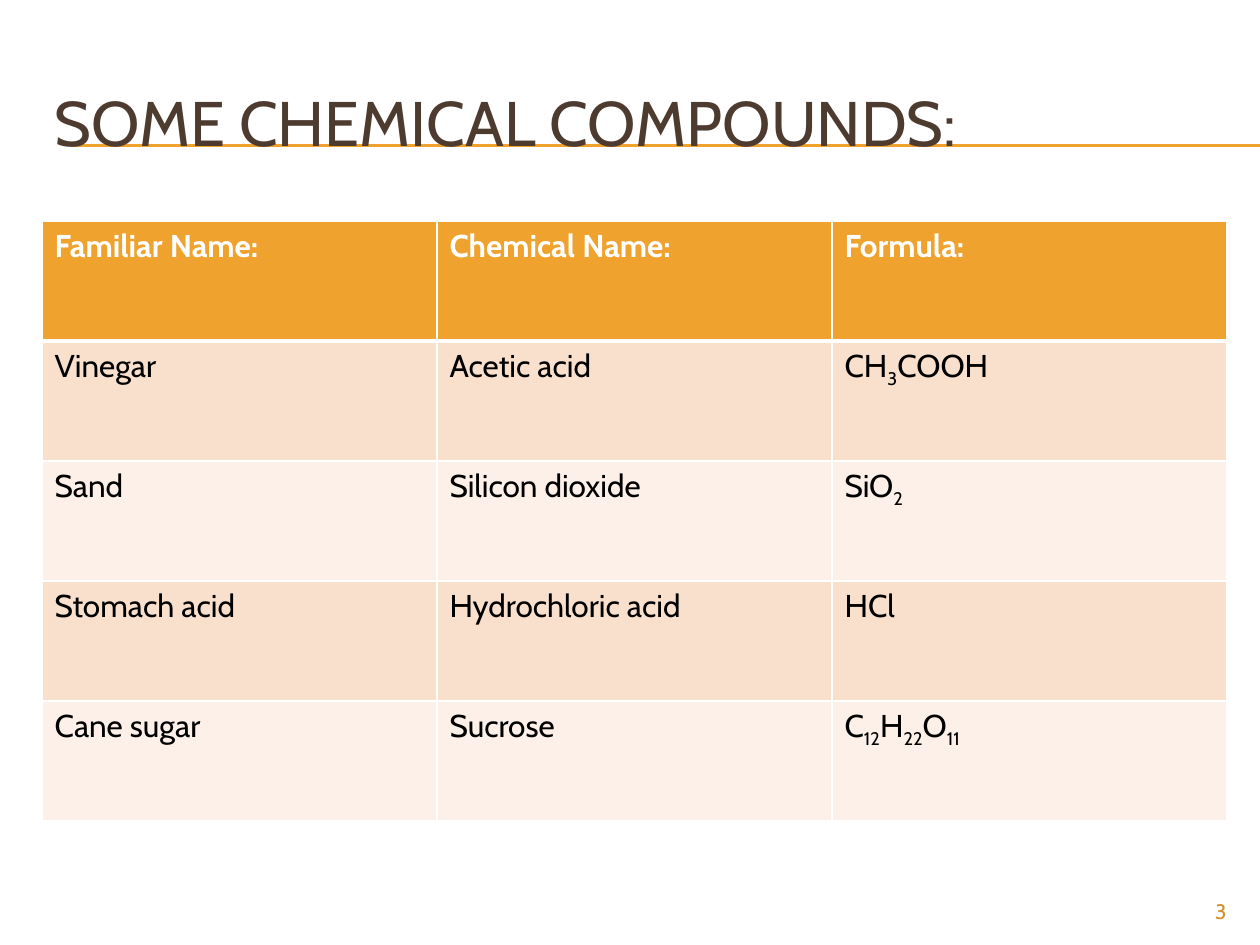
from dataclasses import dataclass
from itertools import groupby

from lxml.etree import SubElement
from pptx import Presentation
from pptx.dml.color import RGBColor
from pptx.enum.shapes import MSO_CONNECTOR as Conn
from pptx.enum.text import MSO_ANCHOR as Anchor, PP_ALIGN as Align
from pptx.oxml.ns import qn
from pptx.util import Emu, Pt

FONT = "Cabin"
PX = 914400 / 126  # EMU in one px
COLORS = {
    "accent": "F0A22E", "title": "4E3B30", "number": "D48F29",
    "odd": "F9E0CD", "even": "FCF0E8", "white": "FFFFFF", "black": "000000",
}


@dataclass
class Label:
    text: str
    box: tuple[int, int, int, int]
    size: int
    color: str
    align: Align = Align.LEFT
    anchor: Anchor = Anchor.TOP


@dataclass
class Compound:
    familiar: str
    chemical: str
    formula: str


LABELS = [
    Label("SOME CHEMICAL COMPOUNDS:", (42, 63, 1197, 116), 36, "title", anchor=Anchor.MIDDLE),
    Label("3", (1134, 892, 105, 34), 12, "number", Align.RIGHT),
]
HEADER = ["Familiar Name:", "Chemical Name:", "Formula:"]
COMPOUNDS = [
    Compound("Vinegar", "Acetic acid", "CH3COOH"),
    Compound("Sand", "Silicon dioxide", "SiO2"),
    Compound("Stomach acid", "Hydrochloric acid", "HCl"),
    Compound("Cane sugar", "Sucrose", "C12H22O11"),
]
RULE_TOPS = (145, 146)
TABLE_LEFT, TABLE_TOP, COL_W, ROW_H = 42, 221, 395, 120


def px(n: int) -> Emu:
    return Emu(round(n * PX))


def rgb(name: str) -> RGBColor:
    return RGBColor.from_string(COLORS[name])


def add_run(p, text: str, size: int, color: str, bold: bool = False, sub: bool = False) -> None:
    r = p.add_run()
    r.text = text
    r.font.name, r.font.size, r.font.bold = FONT, Pt(size), bold
    r.font.color.rgb = rgb(color)
    if sub:
        r.font._element.set("baseline", "-25000")


def add_rule(s, y: int) -> None:
    ln = s.shapes.add_connector(Conn.STRAIGHT, px(71), px(y), px(1260), px(y))
    ln.line.color.rgb, ln.line.width = rgb("accent"), Pt(0.75)
    SubElement(ln._element.spPr, qn("a:effectLst"))


def add_label(s, label: Label) -> None:
    tf = s.shapes.add_textbox(*map(px, label.box)).text_frame
    tf.word_wrap, tf.vertical_anchor = True, label.anchor
    p = tf.paragraphs[0]
    p.alignment = label.align
    add_run(p, label.text, label.size, label.color)


def set_borders(cell, widths: dict[str, int]) -> None:
    tc_pr = cell._tc.get_or_add_tcPr()
    for i, (side, width) in enumerate(widths.items()):
        ln = tc_pr.makeelement(qn(f"a:{side}"), {"w": str(Pt(width))})
        fill = SubElement(ln, qn("a:solidFill"))
        SubElement(fill, qn("a:srgbClr"), val=COLORS["white"])
        tc_pr.insert(i, ln)  # borders come before the fill


def fill_cell(cell, text: str, row: int, is_formula: bool) -> None:
    head = row == 0
    cell.fill.solid()
    cell.fill.fore_color.rgb = rgb("accent" if head else "odd" if row % 2 else "even")
    set_borders(cell, {"lnL": 1, "lnR": 1, "lnT": 3 if row == 1 else 1, "lnB": 3 if head else 1})
    p = cell.text_frame.paragraphs[0]
    # Digits in a formula are subscripts
    for digits, chars in groupby(text, str.isdigit):
        add_run(p, "".join(chars), 18, "white" if head else "black", head, is_formula and digits)


def add_compounds(s) -> None:
    rows = [HEADER] + [[c.familiar, c.chemical, c.formula] for c in COMPOUNDS]
    n_rows, n_cols = len(rows), len(HEADER)
    table = s.shapes.add_table(n_rows, n_cols, px(TABLE_LEFT), px(TABLE_TOP),
                               px(COL_W * n_cols), px(ROW_H * n_rows)).table
    for col in table.columns:
        col.width = px(COL_W)
    for i, row in enumerate(rows):
        table.rows[i].height = px(ROW_H)
        for j, text in enumerate(row):
            fill_cell(table.cell(i, j), text, i, j == n_cols - 1)


def main() -> None:
    prs = Presentation()
    prs.slide_width, prs.slide_height = px(1260), px(945)
    s = prs.slides.add_slide(prs.slide_layouts[6])

    # Double rule behind the title
    for y in RULE_TOPS:
        add_rule(s, y)

    # Title and slide number
    for label in LABELS:
        add_label(s, label)

    # Table of compounds
    add_compounds(s)
    prs.save("out.pptx")


if __name__ == "__main__":
    main()
